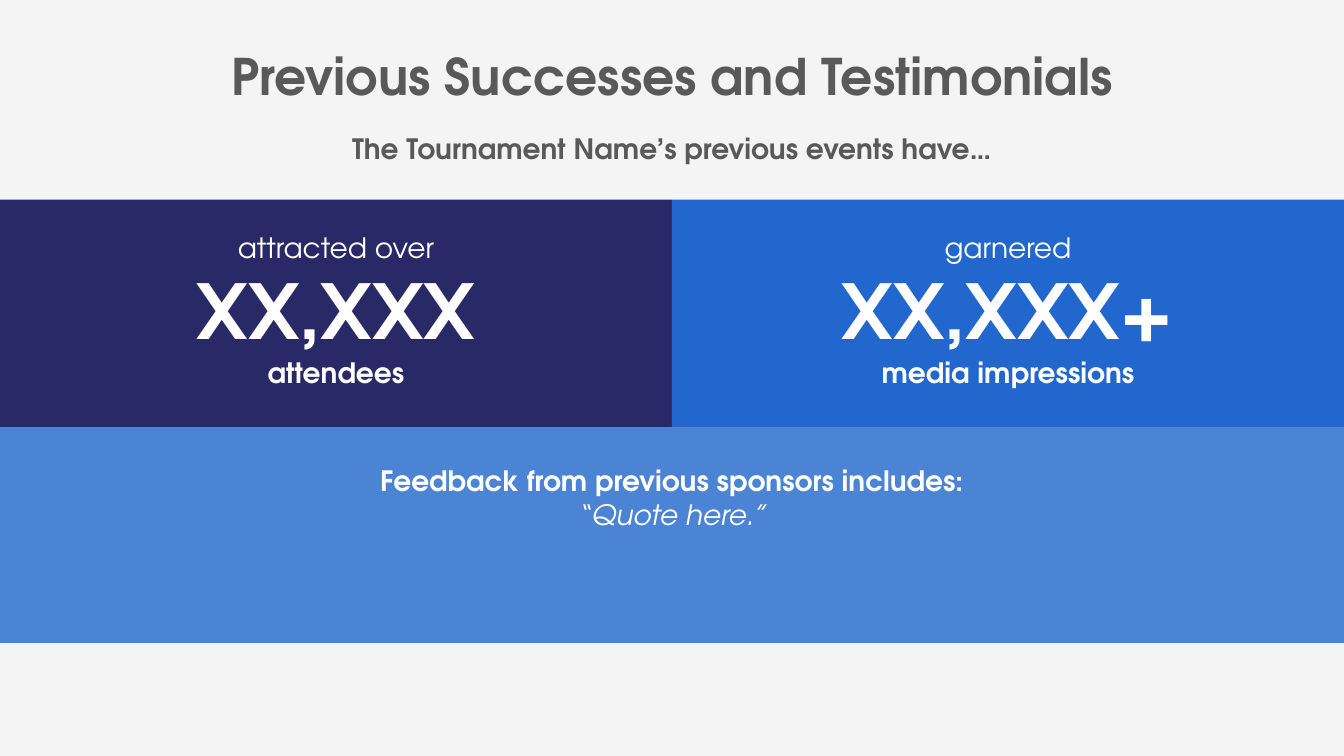
import pptx
import pptx.util
import pptx.dml.color
import pptx.enum.shapes
import pptx.enum.text
from lxml import etree
from pptx.oxml.ns import qn

Cm = pptx.util.Cm
WIDTH, HEIGHT = 33.87, 19.05
HALF = WIDTH / 2
GREY, WHITE, NAVY, BLUE = "595959", "FFFFFF", "292967", "2167CE"


def paint(target, color):
    target.rgb = pptx.dml.color.RGBColor.from_string(color)


class Deck:
    font = "TeX Gyre Adventor"

    def __init__(self, back):
        self.show = pptx.Presentation()
        self.show.slide_width, self.show.slide_height = Cm(WIDTH), Cm(HEIGHT)
        self.slide = self.show.slides.add_slide(self.show.slide_layouts[6])
        fill = self.slide.background.fill
        fill.solid()
        paint(fill.fore_color, back)

    def panel(self, left, top, width, height, color, alpha=None):
        """Add a filled block; alpha is its opacity in percent."""
        kind = pptx.enum.shapes.MSO_SHAPE.ROUNDED_RECTANGLE
        block = self.slide.shapes.add_shape(
            kind, Cm(left), Cm(top), Cm(width), Cm(height))
        block.adjustments[0] = 0
        block.shadow.inherit = False
        block.line.fill.background()
        block.fill.solid()
        paint(block.fill.fore_color, color)
        if alpha is not None:
            tint = block._element.spPr.find(".//" + qn("a:srgbClr"))
            etree.SubElement(tint, qn("a:alpha")).set("val", str(alpha * 1000))

    def text(self, mid, top, width, height, color, *paras):
        """Add text centred on mid; a paragraph lists (words, size, style) runs,
        with None for a line break."""
        box = self.slide.shapes.add_textbox(
            Cm(mid - width / 2), Cm(top), Cm(width), Cm(height))
        frame = box.text_frame
        frame.word_wrap = True
        frame.auto_size = pptx.enum.text.MSO_AUTO_SIZE.SHAPE_TO_FIT_TEXT
        for i, runs in enumerate(paras):
            para = frame.add_paragraph() if i else frame.paragraphs[0]
            para.alignment = pptx.enum.text.PP_ALIGN.CENTER
            for item in runs:
                if item is None:
                    para.add_line_break()
                    continue
                words, size, style = item
                run = para.add_run()
                run.text = words
                run.font.name = self.font
                run.font.size = pptx.util.Pt(size)
                run.font.bold = style == "bold"
                run.font.italic = style == "italic"
                paint(run.font.color, color)


def main():
    deck = Deck("F4F4F4")
    deck.text(HALF, 1.02, 25.17, 1.8, GREY,
              [("Previous Successes and Testimonials", 36, "bold")])
    deck.text(HALF, 3.2, 19.79, 1.12, GREY,
              [("The Tournament Name’s previous events have…", 20, "bold")])

    deck.panel(0, 10.76, WIDTH, 5.44, BLUE, alpha=80)
    deck.text(HALF, 11.56, 19.5, 1.96, WHITE,
              [("Feedback from previous sponsors includes:", 20, "bold")],
              [("“Quote here.”", 20, "italic")])

    stats = [
        (NAVY, "attracted over", "XX,XXX", "attendees"),
        (BLUE, "garnered", "XX,XXX+", "media impressions"),
    ]
    for i, (color, lead, count, unit) in enumerate(stats):
        left = i * HALF
        deck.panel(left, 5.03, HALF, 5.73, color)
        deck.text(left + HALF / 2, 5.69, HALF, 4.27, WHITE,
                  [(lead, 20, "plain")],
                  [(count, 54, "bold"), None, (unit, 20, "bold")])

    deck.show.save("out.pptx")


if __name__ == "__main__":
    main()
